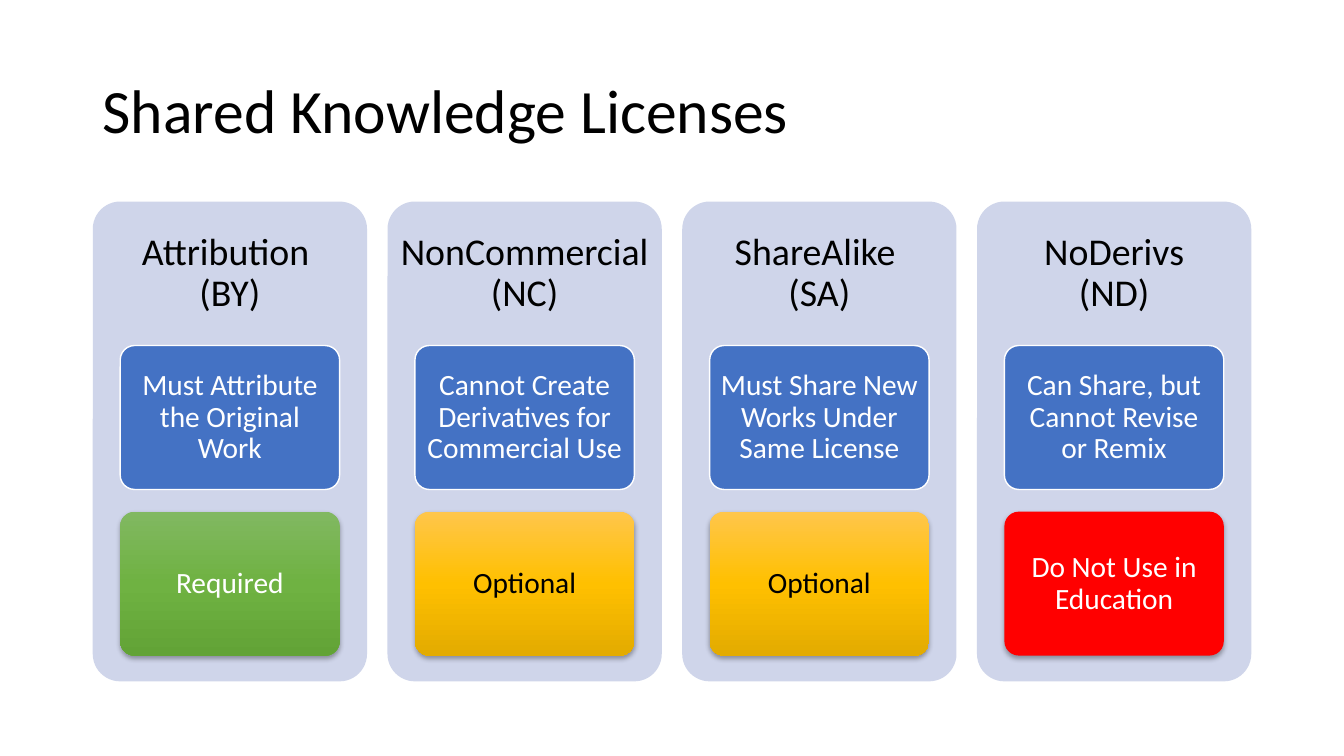
"""Build the Shared Knowledge Licenses slide: four license columns with a rule and a verdict each."""
from lxml import etree
from pptx import Presentation
from pptx.dml.color import RGBColor
from pptx.enum.shapes import MSO_SHAPE
from pptx.enum.text import MSO_ANCHOR, PP_ALIGN
from pptx.oxml import parse_xml
from pptx.oxml.ns import nsdecls, qn
from pptx.util import Inches, Pt

ROUNDED = MSO_SHAPE.ROUNDED_RECTANGLE
MIDDLE = MSO_ANCHOR.MIDDLE
LEFT, CENTER = PP_ALIGN.LEFT, PP_ALIGN.CENTER

BLACK = RGBColor(0x00, 0x00, 0x00)
WHITE = RGBColor(0xFF, 0xFF, 0xFF)
PANEL_BLUE = RGBColor(0xCF, 0xD5, 0xEA)
RULE_BLUE = RGBColor(0x44, 0x72, 0xC4)
RED = [RGBColor(0xFF, 0x00, 0x00)]
GREENS = [RGBColor(0x81, 0xB8, 0x61), RGBColor(0x6F, 0xB2, 0x42), RGBColor(0x62, 0xA3, 0x36)]
GOLDS = [RGBColor(0xFF, 0xC6, 0x4B), RGBColor(0xFF, 0xC0, 0x00), RGBColor(0xE3, 0xAB, 0x00)]

TITLE = "Shared Knowledge Licenses"
LICENSES = [
    ("Attribution \v(BY)", "Must Attribute the Original Work", "Required", GREENS, WHITE),
    ("NonCommercial (NC)", "Cannot Create Derivatives for Commercial Use", "Optional", GOLDS, BLACK),
    ("ShareAlike \v(SA)", "Must Share New Works Under Same License", "Optional", GOLDS, BLACK),
    ("NoDerivs\v(ND)", "Can Share, but Cannot Revise or Remix", "Do Not Use in Education", RED, WHITE),
]

SLIDE_W, SLIDE_H = 13.33, 7.5
MARGIN, CONTENT_W = 0.92, 11.49
TITLE_TOP, TITLE_H = 0.4, 1.45
PANEL_TOP, PANEL_W, PANEL_H = 2, 2.72, 4.76
PITCH = (CONTENT_W - PANEL_W) / (len(LICENSES) - 1)
ROW_H = 0.3 * PANEL_H
CARD_W = 0.8 * PANEL_W
CARD_INDENT = (PANEL_W - CARD_W) / 2
RULE_TOP = PANEL_TOP + ROW_H
VERDICT_TOP = RULE_TOP + ROW_H + 0.22

TITLE_FORMAT = {"size": 44, "align": LEFT, "inset": (0.1, 0.05)}
HEADING_FORMAT = {"size": 27, "align": CENTER, "inset": (0.11, 0.11)}
CARD_FORMAT = {"size": 21, "align": CENTER, "inset": (0.06, 0.04)}


def write(holder, words, color, size, align, inset):
    frame = holder.text_frame
    across, down = (Inches(gap) for gap in inset)
    frame_format = {
        "word_wrap": True, "vertical_anchor": MIDDLE, "text": words,
        "margin_left": across, "margin_right": across,
        "margin_top": down, "margin_bottom": down,
    }
    for name, value in frame_format.items():
        setattr(frame, name, value)
    paragraph = frame.paragraphs[0]
    paragraph.alignment, paragraph.line_spacing = align, 0.9
    for run in paragraph.runs:
        run.font.name, run.font.size = "Calibri", Pt(size)
        run.font.color.rgb = color


def add_text(slide, box, words, style):
    write(slide.shapes.add_textbox(*map(Inches, box)), words, BLACK, **style)


def paint(shape, tones):
    if len(tones) == 1:
        shape.fill.solid()
        shape.fill.fore_color.rgb = tones[0]
        return
    step = 100000 // (len(tones) - 1)
    stops = "".join(
        f'<a:gs pos="{place * step}"><a:srgbClr val="{tone}"/></a:gs>'
        for place, tone in enumerate(tones)
    )
    gradient = parse_xml(
        f'<a:gradFill {nsdecls("a")} rotWithShape="1"><a:gsLst>{stops}</a:gsLst>'
        '<a:lin ang="5400000" scaled="0"/></a:gradFill>'
    )
    shape.element.spPr.find(qn("a:prstGeom")).addnext(gradient)


def add_rounded(slide, box, tones, outlined=False):
    shape = slide.shapes.add_shape(ROUNDED, *map(Inches, box))
    shape.adjustments[0] = 0.1
    shape.shadow.inherit = False
    paint(shape, tones)
    if outlined:
        shape.line.color.rgb = WHITE
        shape.line.width = Pt(1)
    else:
        shape.line.fill.background()
    return shape


def cast_shadow(shape):
    effects = shape.element.spPr.find(qn("a:effectLst"))
    shadow = etree.SubElement(
        effects, qn("a:outerShdw"), blurRad=str(Pt(3.5)), dist=str(Pt(2.2)),
        dir="5400000", rotWithShape="0",
    )
    tone = etree.SubElement(shadow, qn("a:srgbClr"), val=str(BLACK))
    etree.SubElement(tone, qn("a:alpha"), val="32000")


def main():
    deck = Presentation()
    deck.slide_width, deck.slide_height = Inches(SLIDE_W), Inches(SLIDE_H)
    slide = deck.slides.add_slide(deck.slide_layouts[6])
    add_text(slide, (MARGIN, TITLE_TOP, CONTENT_W, TITLE_H), TITLE, TITLE_FORMAT)
    for column, (heading, rule, verdict, tones, ink) in enumerate(LICENSES):
        left = MARGIN + column * PITCH
        card_left = left + CARD_INDENT
        add_rounded(slide, (left, PANEL_TOP, PANEL_W, PANEL_H), [PANEL_BLUE])
        add_text(slide, (left, PANEL_TOP, PANEL_W, ROW_H), heading, HEADING_FORMAT)
        rule_card = add_rounded(slide, (card_left, RULE_TOP, CARD_W, ROW_H), [RULE_BLUE], True)
        write(rule_card, rule, WHITE, **CARD_FORMAT)
        verdict_card = add_rounded(slide, (card_left, VERDICT_TOP, CARD_W, ROW_H), tones)
        cast_shadow(verdict_card)
        write(verdict_card, verdict, ink, **CARD_FORMAT)
    deck.save("out.pptx")


if __name__ == "__main__":
    main()
